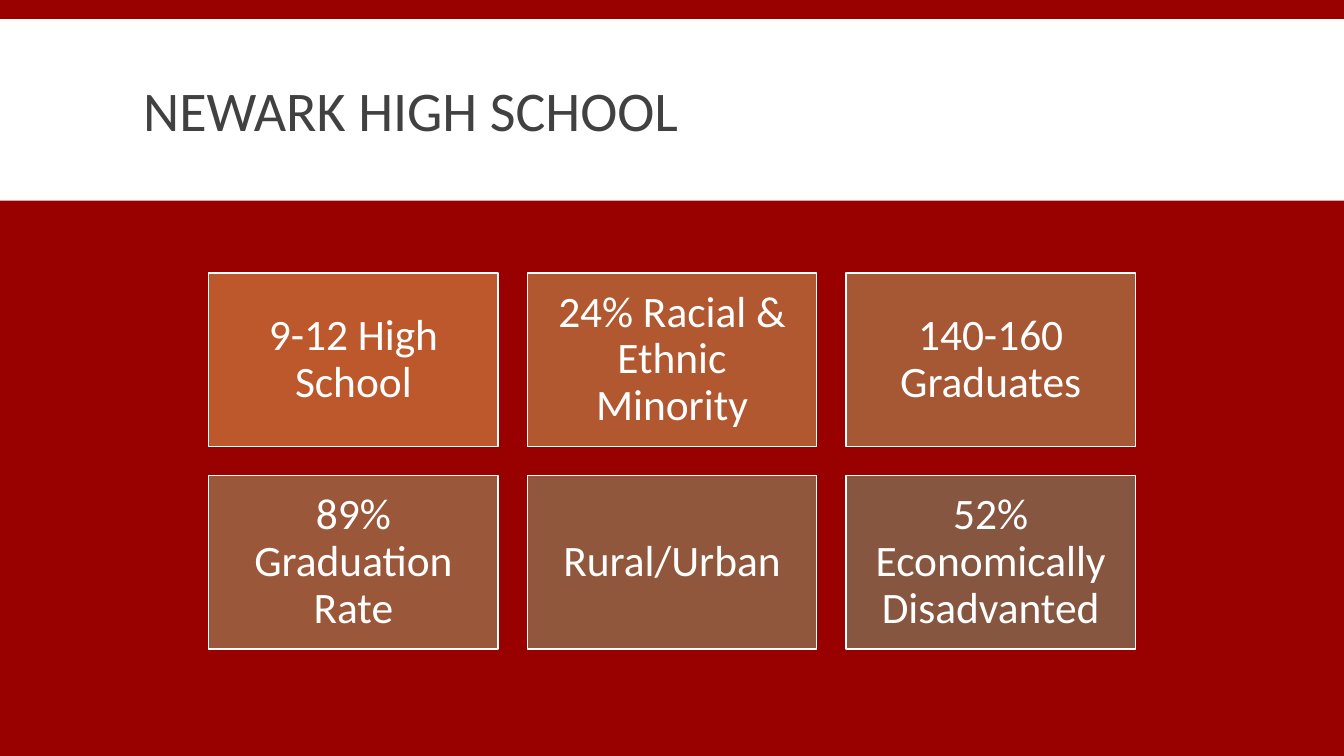
from dataclasses import dataclass

from pptx import Presentation
from pptx.dml.color import RGBColor
from pptx.enum.shapes import MSO_SHAPE
from pptx.enum.text import MSO_ANCHOR, MSO_AUTO_SIZE, PP_ALIGN
from pptx.util import Inches, Pt


@dataclass(frozen=True)
class Theme:
    """Colours, font and type sizes of the slide."""
    font: str = "Calibri"
    background: str = "990000"
    light: str = "FFFFFF"
    heading: str = "414141"
    heading_size: int = 40
    fact_size: int = 31


class SchoolSlide:
    """Draws styled elements on one slide."""

    def __init__(self, slide, theme):
        """Keep the slide and theme, and colour the background."""
        self.slide = slide
        self.theme = theme
        fill = slide.background.fill
        fill.solid()
        fill.fore_color.rgb = RGBColor.from_string(theme.background)

    def label(self, shape, text, size, color, align, spacing, inset):
        """Fill a shape with one styled run."""
        frame = shape.text_frame
        frame.word_wrap = True
        frame.auto_size = MSO_AUTO_SIZE.NONE
        frame.vertical_anchor = MSO_ANCHOR.MIDDLE
        frame.margin_left = frame.margin_right = Inches(inset)
        frame.margin_top = frame.margin_bottom = Inches(inset)
        paragraph = frame.paragraphs[0]
        paragraph.alignment = align
        paragraph.line_spacing = spacing
        paragraph.space_before = Pt(0)
        run = paragraph.add_run()
        run.text = text
        run.font.name = self.theme.font
        run.font.size = Pt(size)
        run.font.color.rgb = RGBColor.from_string(color)

    def heading(self, text, left, top, width, height):
        """Place and format the title placeholder."""
        title = self.slide.shapes.title
        title.left, title.top = Inches(left), Inches(top)
        title.width, title.height = Inches(width), Inches(height)
        self.label(title, text, self.theme.heading_size, self.theme.heading,
                   PP_ALIGN.LEFT, 0.85, 0.1)

    def rectangle(self, left, top, width, height, color):
        """Add a plain rectangle without an outline."""
        shape = self.slide.shapes.add_shape(
            MSO_SHAPE.RECTANGLE, Inches(left), Inches(top), Inches(width), Inches(height))
        shape.shadow.inherit = False
        shape.fill.solid()
        shape.fill.fore_color.rgb = RGBColor.from_string(color)
        shape.line.fill.background()
        return shape

    def band(self, left, top, width, height):
        """Add the light band behind the title."""
        band = self.rectangle(left, top, width, height, self.theme.light)
        self.slide.shapes.title.element.addprevious(band.element)

    def fact(self, text, left, top, width, height, color):
        """Add one outlined fact card."""
        card = self.rectangle(left, top, width, height, color)
        card.line.color.rgb = RGBColor.from_string(self.theme.light)
        card.line.width = Pt(1)
        self.label(card, text, self.theme.fact_size, self.theme.light,
                   PP_ALIGN.CENTER, 0.9, 0.13)


def main():
    """Build and save the school profile slide."""
    presentation = Presentation()
    presentation.slide_width = Inches(13.33)
    presentation.slide_height = Inches(7.5)
    slide = presentation.slides.add_slide(presentation.slide_layouts[5])
    profile = SchoolSlide(slide, Theme())
    profile.band(0, 0.19, 13.33, 1.8)
    profile.heading("NEWARK HIGH SCHOOL", 1.32, 0.31, 10.7, 1.65)

    facts = [
        ("9-12 High School", "BD582C"),
        ("24% Racial & Ethnic Minority", "B15831"),
        ("140-160 Graduates", "A65835"),
        ("89% Graduation Rate", "9B5739"),
        ("Rural/Urban", "90573D"),
        ("52% Economically Disadvanted", "865640"),
    ]
    columns, width, height, gap = 3, 2.87, 1.72, 0.29
    for index, (text, color) in enumerate(facts):
        row, column = divmod(index, columns)
        profile.fact(text, 2.07 + column * (width + gap),
                     2.71 + row * (height + gap), width, height, color)

    presentation.save("out.pptx")


if __name__ == "__main__":
    main()
